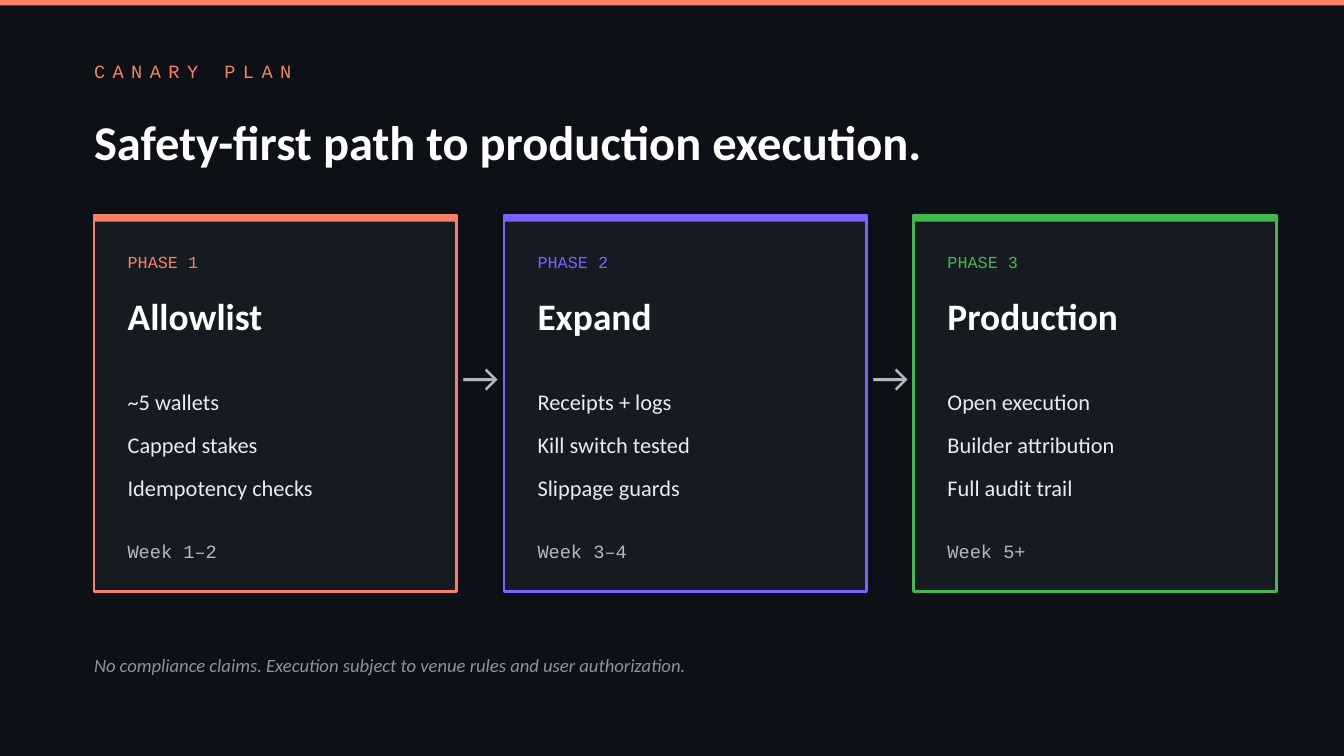
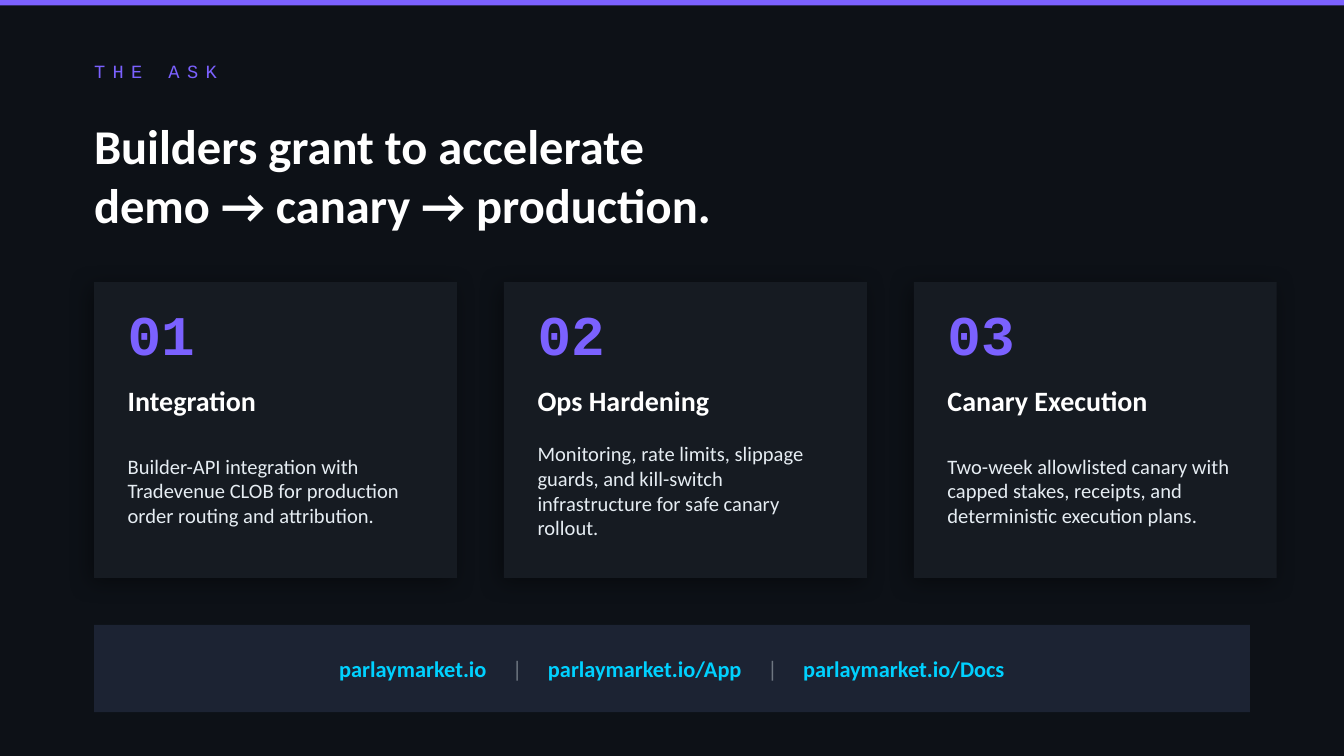
from dataclasses import dataclass, replace

from lxml.etree import SubElement
from pptx import Presentation
from pptx.dml.color import RGBColor
from pptx.enum.shapes import MSO_SHAPE
from pptx.enum.text import MSO_ANCHOR, PP_ALIGN
from pptx.oxml.ns import qn
from pptx.shapes.autoshape import Shape
from pptx.slide import Slide
from pptx.util import Pt

SANS, MONO = "Calibri", "Courier New"
BACKGROUND, CARD, BAND = "0D1117", "161B22", "1C2333"
WHITE, BODY, MUTED, DIM, RULE = "FFFFFF", "E6EDF3", "B1BAC4", "8B949E", "6E7681"
CORAL, VIOLET, GREEN, CYAN = "F78166", "7B61FF", "3FB950", "00D1FF"

WIDTH, HEIGHT = 720, 405
LEFT, CARD_W, GAP, PAD = 50.4, 194.4, 25.2, 18
INNER_W = 158.4
LINK_GAP = 10.9


@dataclass(frozen=True)
class Style:
    size: float
    color: str
    font: str = SANS
    bold: bool = False
    italic: bool = False
    align: PP_ALIGN = PP_ALIGN.LEFT
    leading: float | None = None
    spacing: float = 0


@dataclass(frozen=True)
class Box:
    x: float
    y: float
    w: float
    h: float


@dataclass(frozen=True)
class Phase:
    name: str
    color: str
    points: list[str]
    weeks: str


@dataclass(frozen=True)
class Ask:
    name: str
    detail: str


TITLE = Style(26, WHITE, bold=True)
PHASE_NAME = Style(20, WHITE, bold=True)
PHASE_POINTS = Style(12, BODY, leading=1.6)
WEEKS = Style(10, MUTED, MONO)
ARROW = Style(22, MUTED, align=PP_ALIGN.CENTER)
NOTE = Style(10, DIM, italic=True)
NUMBER = Style(30, VIOLET, MONO, bold=True)
ASK_NAME = Style(15, WHITE, bold=True)
ASK_DETAIL = Style(11, BODY)
LINK = Style(12, CYAN, bold=True, align=PP_ALIGN.CENTER)
DIVIDER = Style(12, RULE)

PHASES = [
    Phase("Allowlist", CORAL,
          ["~5 wallets", "Capped stakes", "Idempotency checks"], "Week 1–2"),
    Phase("Expand", VIOLET,
          ["Receipts + logs", "Kill switch tested", "Slippage guards"], "Week 3–4"),
    Phase("Production", GREEN,
          ["Open execution", "Builder attribution", "Full audit trail"], "Week 5+"),
]
ASKS = [
    Ask("Integration", "Builder-API integration with Tradevenue CLOB for production "
        "order routing and attribution."),
    Ask("Ops Hardening", "Monitoring, rate limits, slippage guards, and kill-switch "
        "infrastructure for safe canary rollout."),
    Ask("Canary Execution", "Two-week allowlisted canary with capped stakes, receipts, "
        "and deterministic execution plans."),
]
LINKS = ["parlaymarket.io", "parlaymarket.io/App", "parlaymarket.io/Docs"]


def rgb(color: str) -> RGBColor:
    return RGBColor.from_string(color)


def set_font(target, style: Style) -> None:
    font = target.font
    font.name, font.size = style.font, Pt(style.size)
    font.bold, font.italic = style.bold, style.italic
    font.color.rgb = rgb(style.color)


def add_run(p, text: str, spacing: float = 0):
    r = p.add_run()
    r.text = text
    if spacing:
        r._r.get_or_add_rPr().set("spc", str(round(spacing * 100)))
    return r


def add_frame(s: Slide, box: Box):
    tf = s.shapes.add_textbox(Pt(box.x), Pt(box.y), Pt(box.w), Pt(box.h)).text_frame
    tf.word_wrap = True
    tf.vertical_anchor = MSO_ANCHOR.MIDDLE
    tf.margin_left = tf.margin_top = tf.margin_right = tf.margin_bottom = 0
    return tf


def add_text(s: Slide, box: Box, lines: list[str], style: Style) -> None:
    tf = add_frame(s, box)
    for i, line in enumerate(lines):
        p = tf.add_paragraph() if i else tf.paragraphs[0]
        p.alignment = style.align
        if style.leading:
            p.line_spacing = style.leading
        add_run(p, line, style.spacing)
        set_font(p, style)


def add_rect(s: Slide, box: Box, fill: str, line: str | None = None) -> Shape:
    sp = s.shapes.add_shape(MSO_SHAPE.RECTANGLE, Pt(box.x), Pt(box.y), Pt(box.w), Pt(box.h))
    sp.shadow.inherit = False
    sp.fill.solid()
    sp.fill.fore_color.rgb = rgb(fill)
    if line:
        sp.line.color.rgb = rgb(line)
        sp.line.width = Pt(1.5)
    else:
        sp.line.fill.background()
    return sp


def add_shadow(sp: Shape) -> None:
    effects = sp._element.spPr.find(qn("a:effectLst"))
    shadow = SubElement(effects, qn("a:outerShdw"), blurRad=str(Pt(12)), dist=str(Pt(3)),
                        dir=str(135 * 60000), algn="bl", rotWithShape="0")
    color = SubElement(shadow, qn("a:srgbClr"), val="000000")
    SubElement(color, qn("a:alpha"), val="40000")


def card_x(index: int) -> float:
    return LEFT + index * (CARD_W + GAP)


def new_slide(prs, accent: str, label: str, title: list[str], title_box: Box) -> Slide:
    s = prs.slides.add_slide(prs.slide_layouts[6])
    s.background.fill.solid()
    s.background.fill.fore_color.rgb = rgb(BACKGROUND)
    add_rect(s, Box(0, 0, WIDTH, 2.88), accent)
    add_text(s, Box(LEFT, 25.2, 288, 25.2), [label], Style(10, accent, MONO, spacing=4))
    add_text(s, title_box, title, TITLE)
    return s


def add_phase(s: Slide, index: int, phase: Phase) -> None:
    x, y = card_x(index), 115.2
    inner = Box(x + PAD, 129.6, INNER_W, 21.6)
    add_rect(s, Box(x, y, CARD_W, 201.6), CARD, phase.color)
    add_rect(s, Box(x, y, CARD_W, 3.6), phase.color)
    add_text(s, inner, [f"PHASE {index + 1}"], Style(9, phase.color, MONO))
    add_text(s, replace(inner, y=154.8, h=28.8), [phase.name], PHASE_NAME)
    add_text(s, replace(inner, y=190.8, h=86.4), phase.points, PHASE_POINTS)
    add_text(s, replace(inner, y=284.4), [phase.weeks], WEEKS)
    if index < len(PHASES) - 1:
        add_text(s, Box(x + CARD_W, 180, GAP, 43.2), ["→"], ARROW)


def add_ask(s: Slide, index: int, ask: Ask) -> None:
    x = card_x(index)
    inner = Box(x + PAD, 201.6, INNER_W, 25.2)
    add_shadow(add_rect(s, Box(x, 151.2, CARD_W, 158.4), CARD))
    add_text(s, replace(inner, y=158.4, w=72, h=39.6), [f"{index + 1:02}"], NUMBER)
    add_text(s, inner, [ask.name], ASK_NAME)
    add_text(s, replace(inner, y=230.4, h=64.8), [ask.detail], ASK_DETAIL)


def add_links(s: Slide) -> None:
    band = Box(LEFT, 334.8, 619.2, 46.8)
    add_rect(s, band, BAND)
    p = add_frame(s, replace(band, x=64.8, w=590.4)).paragraphs[0]
    p.alignment = LINK.align
    for i, link in enumerate(LINKS):
        if i:
            for text, spacing in ((" ", LINK_GAP), ("|", 0), (" ", LINK_GAP)):
                set_font(add_run(p, text, spacing), DIVIDER)
        set_font(add_run(p, link), LINK)


def main() -> None:
    prs = Presentation()
    prs.slide_width, prs.slide_height = Pt(WIDTH), Pt(HEIGHT)

    s = new_slide(prs, CORAL, "CANARY PLAN", ["Safety-first path to production execution."],
                  Box(LEFT, 54, 648, 43.2))
    for i, phase in enumerate(PHASES):
        add_phase(s, i, phase)
    add_text(s, Box(LEFT, 345.6, 612, 21.6),
             ["No compliance claims. Execution subject to venue rules and user authorization."],
             NOTE)

    s = new_slide(prs, VIOLET, "THE ASK",
                  ["Builders grant to accelerate", "demo → canary → production."],
                  Box(LEFT, 57.6, 576, 72))
    for i, ask in enumerate(ASKS):
        add_ask(s, i, ask)
    add_links(s)

    prs.save("out.pptx")


if __name__ == "__main__":
    main()
